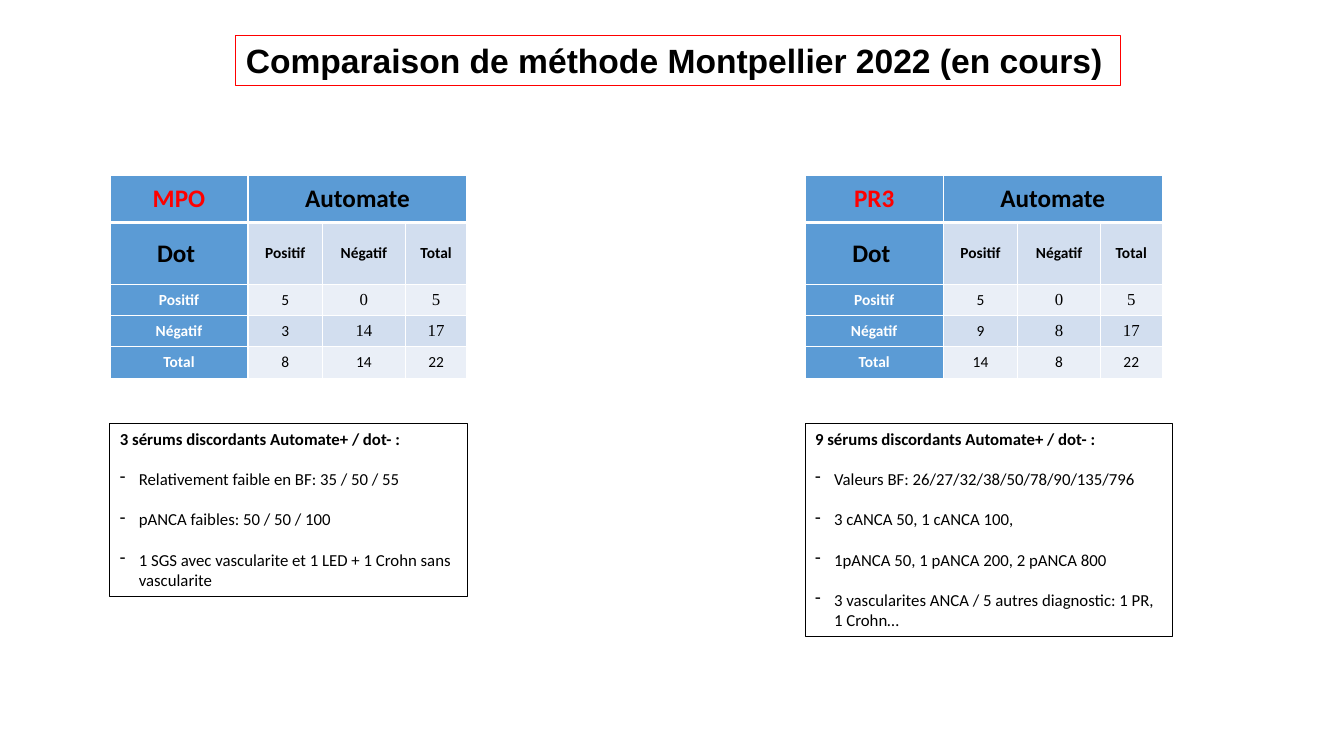
from dataclasses import dataclass

from lxml import etree
from pptx import Presentation
from pptx.dml.color import RGBColor
from pptx.enum.text import MSO_ANCHOR, MSO_AUTO_SIZE, PP_ALIGN
from pptx.oxml.ns import qn
from pptx.util import Cm, Pt

MIDDLE, TOP = MSO_ANCHOR.MIDDLE, MSO_ANCHOR.TOP
CENTER, LEFT = PP_ALIGN.CENTER, PP_ALIGN.LEFT
NO_AUTOFIT = MSO_AUTO_SIZE.NONE

TITLE = "Comparaison de méthode Montpellier 2022 (en cours)"
METHOD = "Automate"
REFERENCE = "Dot "
OUTCOMES = ["Positif", "Négatif", "Total"]
COMPARISONS = [
    {
        "antigen": "MPO",
        "counts": [(5, 0, 5), (3, 14, 17), (8, 14, 22)],
        "heading": "3 sérums discordants Automate+ / dot- :",
        "findings": [
            "Relativement faible en BF: 35 / 50 / 55",
            "pANCA faibles: 50 / 50 / 100",
            "1 SGS avec vascularite et 1 LED + 1 Crohn sans vascularite",
        ],
        "left": 2.77,
        "note_size": (9.02, 4.37),
    },
    {
        "antigen": "PR3",
        "counts": [(5, 0, 5), (9, 8, 17), (14, 8, 22)],
        "heading": "9 sérums discordants Automate+ / dot- :",
        "findings": [
            "Valeurs BF: 26/27/32/38/50/78/90/135/796",
            "3 cANCA 50, 1 cANCA 100,",
            "1pANCA 50, 1 pANCA 200, 2 pANCA 800",
            "3 vascularites ANCA / 5 autres diagnostic: 1 PR, 1 Crohn…",
        ],
        "left": 20.29,
        "note_size": (9.27, 5.38),
    },
]

TITLE_BOX = (5.94, 0.89, 22.3, 1.27)
TABLE_TOP, NOTE_TOP = 4.42, 10.67
COLUMN_WIDTHS = [3.48, 1.88, 2.08, 1.56]
ROW_HEIGHTS = [1.19, 1.55, 0.79, 0.79, 0.79]
HANGING = 0.48


@dataclass(frozen=True)
class Theme:
    """Colours, fonts and type sizes of the slide."""

    black: str = "000000"
    white: str = "FFFFFF"
    red: str = "FF0000"
    blue: str = "5B9BD5"
    bands: tuple = ("EAEFF7", "D2DEEF")
    title_font: str = "Arial"
    body_font: str = "Calibri"
    count_font: str = "Times New Roman"
    title_size: int = 24
    header_size: int = 18
    label_size: int = 11
    body_size: int = 12
    frame_width: float = 0.75
    rule_width: int = 1
    header_rule_width: int = 3


THEME = Theme()


def add_run(paragraph, text, size, color, bold=False, font=THEME.body_font):
    """Append one formatted run to a paragraph."""
    run = paragraph.add_run()
    run.text = text
    run.font.name = font
    run.font.size = Pt(size)
    run.font.bold = bold
    run.font.color.rgb = RGBColor.from_string(color)


def frame(box, color):
    """Outline a box with a thin line."""
    box.line.color.rgb = RGBColor.from_string(color)
    box.line.width = Pt(THEME.frame_width)


def add_title(slide):
    """Place and format the title placeholder."""
    title = slide.shapes.title
    title.left, title.top, title.width, title.height = map(Cm, TITLE_BOX)
    frame(title, THEME.red)
    text_frame = title.text_frame
    text_frame.auto_size = NO_AUTOFIT
    text_frame.word_wrap = True
    text_frame.vertical_anchor = MIDDLE
    heading = text_frame.paragraphs[0]
    heading.alignment = LEFT
    add_run(heading, TITLE, THEME.title_size, THEME.black, True, THEME.title_font)


def rule_cell(cell, row):
    """Draw white borders, heavier between the header and the body."""
    properties = cell._tc.get_or_add_tcPr()
    heavy_side = {0: "lnB", 1: "lnT"}.get(row)
    for position, side in enumerate(("lnL", "lnR", "lnT", "lnB")):
        width = THEME.header_rule_width if side == heavy_side else THEME.rule_width
        border = etree.Element(qn(f"a:{side}"), w=str(Pt(width)))
        fill = etree.SubElement(border, qn("a:solidFill"))
        etree.SubElement(fill, qn("a:srgbClr"), val=THEME.white)
        properties.insert(position, border)


def cell_style(row, column):
    """Return the run formatting for a table position."""
    if row == 0 or (row, column) == (1, 0):
        color = THEME.red if (row, column) == (0, 0) else THEME.black
        return THEME.header_size, color, True
    if column == 0:
        return THEME.label_size, THEME.white, True
    if row == 1:
        return THEME.label_size, THEME.black, True
    if row < len(ROW_HEIGHTS) - 1 and column > 1:
        return THEME.body_size, THEME.black, False, THEME.count_font
    return THEME.label_size, THEME.black, False


def add_contingency(slide, comparison):
    """Add the table crossing both methods for one antigen."""
    rows = [[comparison["antigen"], METHOD, "", ""], [REFERENCE, *OUTCOMES]]
    rows += [[label, *map(str, counts)] for label, counts in zip(OUTCOMES, comparison["counts"])]
    table = slide.shapes.add_table(
        len(ROW_HEIGHTS), len(COLUMN_WIDTHS), Cm(comparison["left"]), Cm(TABLE_TOP),
        Cm(sum(COLUMN_WIDTHS)), Cm(sum(ROW_HEIGHTS)),
    ).table
    for column, width in zip(table.columns, COLUMN_WIDTHS):
        column.width = Cm(width)
    for table_row, height in zip(table.rows, ROW_HEIGHTS):
        table_row.height = Cm(height)
    table.cell(0, 1).merge(table.cell(0, len(COLUMN_WIDTHS) - 1))
    for row, entries in enumerate(rows):
        for column, entry in enumerate(entries):
            cell = table.cell(row, column)
            cell.margin_left = cell.margin_right = Cm(0.13)
            cell.margin_top = cell.margin_bottom = 0
            cell.vertical_anchor = MIDDLE
            background = THEME.blue if row == 0 or column == 0 else THEME.bands[row % 2]
            cell.fill.solid()
            cell.fill.fore_color.rgb = RGBColor.from_string(background)
            rule_cell(cell, row)
            if entry:
                paragraph = cell.text_frame.paragraphs[0]
                paragraph.alignment = CENTER
                add_run(paragraph, entry, *cell_style(row, column))


def add_note(slide, comparison):
    """Add the framed list of discordant sera."""
    width, height = comparison["note_size"]
    note = slide.shapes.add_textbox(Cm(comparison["left"]), Cm(NOTE_TOP), Cm(width), Cm(height))
    frame(note, THEME.black)
    text_frame = note.text_frame
    text_frame.word_wrap = True
    text_frame.vertical_anchor = TOP
    add_run(text_frame.paragraphs[0], comparison["heading"], THEME.body_size, THEME.black, True)
    for finding in comparison["findings"]:
        paragraph = text_frame.add_paragraph()
        paragraph.space_before = Pt(14.4)
        properties = paragraph._p.get_or_add_pPr()
        properties.set("marL", str(Cm(HANGING)))
        properties.set("indent", str(-Cm(HANGING)))
        etree.SubElement(properties, qn("a:buChar"), char="-")
        add_run(paragraph, finding, THEME.body_size, THEME.black)


def main():
    """Build the method comparison slide."""
    presentation = Presentation()
    presentation.slide_width, presentation.slide_height = Cm(33.87), Cm(19.05)
    slide = presentation.slides.add_slide(presentation.slide_layouts[5])
    add_title(slide)
    for comparison in COMPARISONS:
        add_contingency(slide, comparison)
        add_note(slide, comparison)
    presentation.save("out.pptx")


if __name__ == "__main__":
    main()
